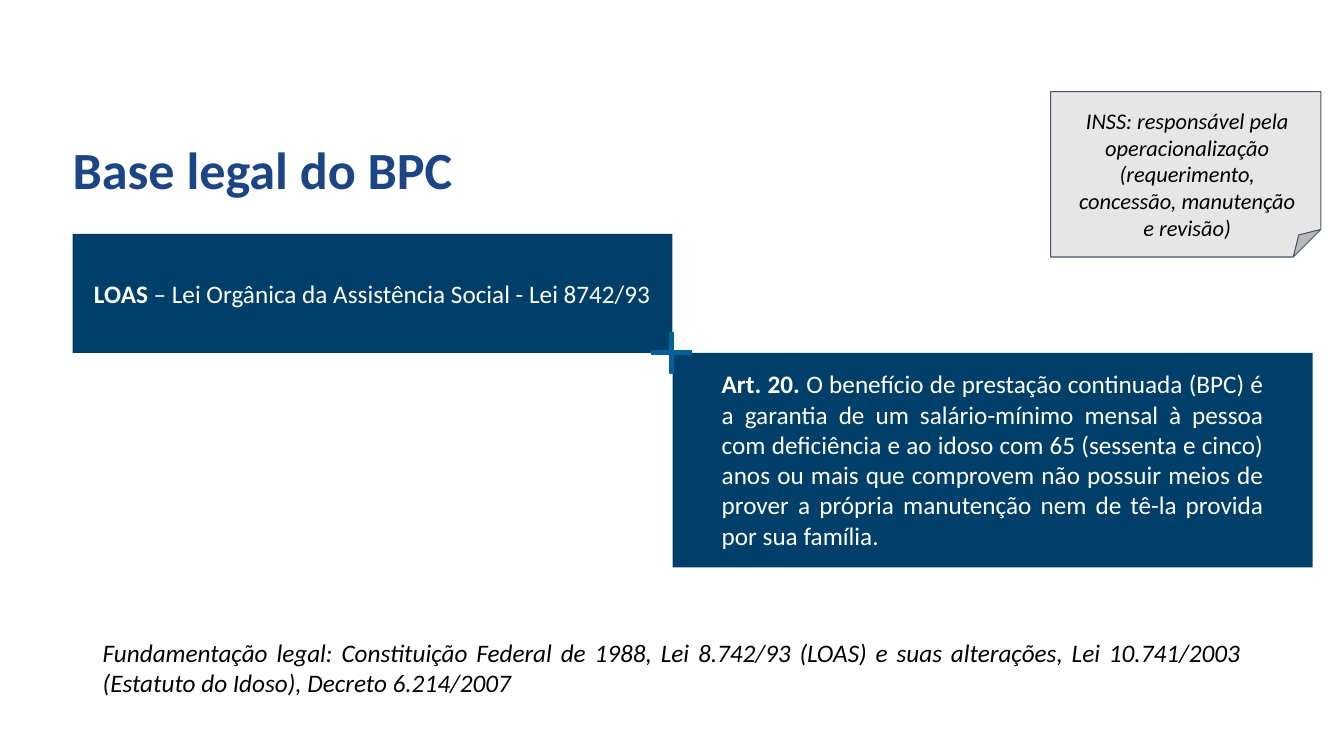
from pptx import Presentation
from pptx.dml.color import RGBColor
from pptx.enum.shapes import MSO_SHAPE as Kind
from pptx.enum.text import MSO_ANCHOR as Anchor, PP_ALIGN as Align
from pptx.util import Inches, Pt

NAVY, BLUE, WHITE, BLACK = "003F6A", "02609B", "FFFFFF", "000000"


def rgb(code):
    return RGBColor.from_string(code)


def write(box, parts, size, color, align, inset=0.05, italic=None):
    """Fill a box with one paragraph of (text, bold) parts."""
    frame = box.text_frame
    frame.word_wrap = True
    frame.vertical_anchor = Anchor.TOP
    frame.margin_left = frame.margin_right = Inches(0.1)
    frame.margin_top = frame.margin_bottom = Inches(inset)
    para = frame.paragraphs[0]
    para.alignment = align
    font = para.font
    font.name, font.size, font.italic = "Calibri", Pt(size), italic
    font.color.rgb = rgb(color)
    for text, bold in parts:
        run = para.add_run()
        run.text = text
        run.font.bold = bold


deck = Presentation()
deck.slide_width, deck.slide_height = Inches(13.33), Inches(7.5)
slide = deck.slides.add_slide(deck.slide_layouts[5])
shapes = slide.shapes

# Title
title = shapes.title
title.left, title.top = Inches(0.62), Inches(1.31)
title.width, title.height = Inches(6.85), Inches(0.72)
write(title, [("Base legal do BPC", True)], 37.3, "1C4587", Align.LEFT)

# Law panels, the plus where they meet, and the note: fill, line, width, adjustment
for kind, place, fill, line, width, adjust in [
    (Kind.RECTANGLE, (0.72, 2.32, 5.95, 1.18), NAVY, None, 0, None),
    (Kind.RECTANGLE, (6.67, 3.5, 6.35, 2.13), NAVY, None, 0, None),
    (Kind.CROSS, (6.46, 3.3, 0.4, 0.4), BLUE, BLUE, 1, 0.45),
    (Kind.FOLDED_CORNER, (10.42, 0.91, 2.68, 1.64), "E7E6E6", "44546A", 0.75, None),
]:
    shape = shapes.add_shape(kind, *map(Inches, place))
    shape.shadow.inherit = False
    shape.fill.solid()
    shape.fill.fore_color.rgb = rgb(fill)
    if line:
        shape.line.color.rgb = rgb(line)
        shape.line.width = Pt(width)
    else:
        shape.line.fill.background()
    if adjust:
        shape.adjustments[0] = adjust

# Texts: place, parts, size, colour, alignment, inset, italic
for place, parts, *style in [
    ((0.62, 2.71, 6.2, 0.4),
     [("LOAS", True), (" – Lei Orgânica da Assistência Social - Lei 8742/93 ", None)],
     18, WHITE, Align.CENTER),
    ((7.06, 3.61, 5.57, 1.9),
     [("Art. 20. ", True),
      ("O benefício de prestação continuada (BPC) é a garantia de um salário-mínimo "
       "mensal à pessoa com deficiência e ao idoso com 65 (sessenta e cinco) anos ou "
       "mais que comprovem não possuir meios de prover a própria manutenção nem de "
       "tê-la provida por sua família.", None)],
     18, WHITE, Align.JUSTIFY),
    ((0.92, 6.22, 11.49, 0.8),
     [("Fundamentação legal: Constituição Federal de 1988, Lei 8.742/93 (LOAS) e suas "
       "alterações, Lei 10.741/2003 (Estatuto do Idoso), Decreto 6.214/2007", None)],
     18, BLACK, Align.JUSTIFY, 0.1, True),
    ((10.54, 0.96, 2.47, 1.53),
     [("INSS: responsável pela operacionalização (requerimento, concessão, "
       "manutenção e revisão)", None)],
     16, BLACK, Align.CENTER, 0.1, True),
]:
    write(shapes.add_textbox(*map(Inches, place)), parts, *style)

deck.save("out.pptx")
